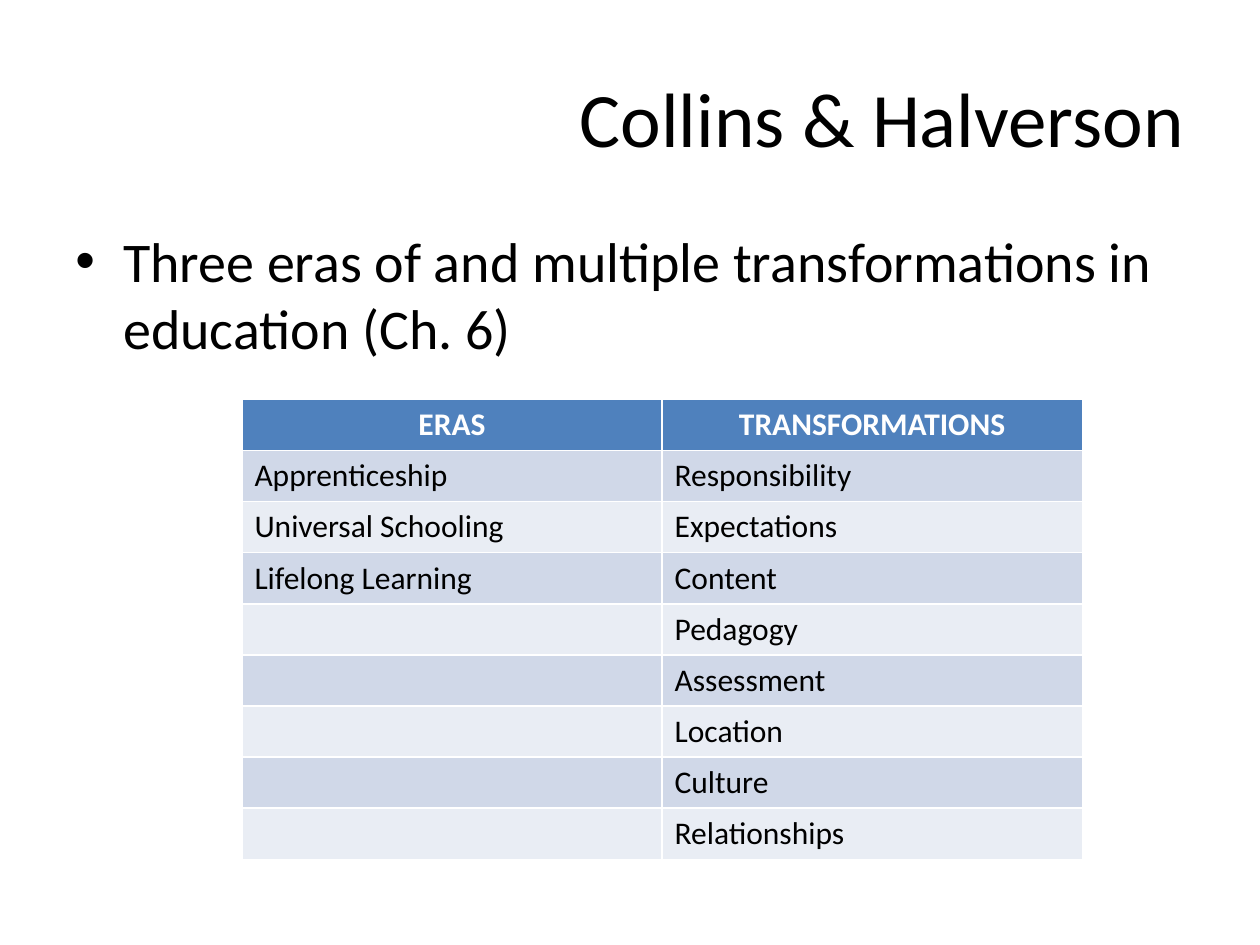
from dataclasses import dataclass
from itertools import zip_longest

from lxml.etree import SubElement
from pptx import Presentation
from pptx.dml.color import RGBColor
from pptx.enum.text import MSO_ANCHOR, PP_ALIGN
from pptx.oxml.ns import qn
from pptx.util import Inches, Pt


@dataclass(frozen=True)
class Theme:
    font: str = "Calibri"
    ink: str = "000000"
    white: str = "FFFFFF"
    head: str = "4F81BD"
    bands: tuple = ("D0D8E8", "E9EDF4")
    title: int = 44
    body: int = 32
    cell: int = 18


class Page:
    def __init__(self, slide, theme):
        self.slide = slide
        self.theme = theme

    def label(self, para, text, size, color=None, bold=False):
        run = para.add_run()
        run.text = text
        font = run.font
        font.name, font.size, font.bold = self.theme.font, Pt(size), bold
        font.color.rgb = RGBColor.from_string(color or self.theme.ink)

    def title(self, text, x, y, w, h):
        shape = self.slide.shapes.title
        shape.left, shape.top = Inches(x), Inches(y)
        shape.width, shape.height = Inches(w), Inches(h)
        frame = shape.text_frame
        frame.vertical_anchor = MSO_ANCHOR.MIDDLE
        para = frame.paragraphs[0]
        para.alignment = PP_ALIGN.RIGHT
        self.label(para, text, self.theme.title)

    def bullets(self, items, x, y, w, h, indent=0.38):
        box = self.slide.shapes.add_textbox(
            Inches(x), Inches(y), Inches(w), Inches(h))
        frame = box.text_frame
        frame.word_wrap = True
        for i, text in enumerate(items):
            para = frame.add_paragraph() if i else frame.paragraphs[0]
            para.space_before = Pt(self.theme.body * 0.2)
            props = para._p.get_or_add_pPr()
            props.set("marL", str(Inches(indent)))
            props.set("indent", str(-Inches(indent)))
            SubElement(props, qn("a:buFont")).set("typeface", "Arial")
            SubElement(props, qn("a:buChar")).set("char", "•")
            self.label(para, text, self.theme.body)

    def table(self, heads, rows, x, y, w, h):
        # The default table style supplies the white cell borders
        look = self.theme
        grid = self.slide.shapes.add_table(
            len(rows) + 1, len(heads),
            Inches(x), Inches(y), Inches(w), Inches(h)).table
        for r, row in enumerate([heads, *rows]):
            top = r == 0
            fill = look.head if top else look.bands[(r - 1) % 2]
            for c, text in enumerate(row):
                cell = grid.cell(r, c)
                cell.fill.solid()
                cell.fill.fore_color.rgb = RGBColor.from_string(fill)
                if not text:
                    continue
                para = cell.text_frame.paragraphs[0]
                para.alignment = PP_ALIGN.CENTER if top else PP_ALIGN.LEFT
                self.label(para, text, look.cell,
                           look.white if top else look.ink, top)


def main():
    deck = Presentation()
    deck.slide_width, deck.slide_height = Inches(10), Inches(7.5)
    page = Page(deck.slides.add_slide(deck.slide_layouts[5]), Theme())

    # Heading and lead point
    page.title("Collins & Halverson", 0.5, 0.3, 9, 1.25)
    page.bullets(
        ["Three eras of and multiple transformations in education (Ch. 6)"],
        0.5, 1.75, 9, 4.95)

    # Eras beside transformations; the shorter column ends in empty cells
    eras = ["Apprenticeship", "Universal Schooling", "Lifelong Learning"]
    shifts = ["Responsibility", "Expectations", "Content", "Pedagogy",
              "Assessment", "Location", "Culture", "Relationships"]
    rows = list(zip_longest(eras, shifts, fillvalue=""))
    page.table(["ERAS", "TRANSFORMATIONS"], rows, 1.92, 3.17, 6.67, 3.65)

    deck.save("out.pptx")


if __name__ == "__main__":
    main()
